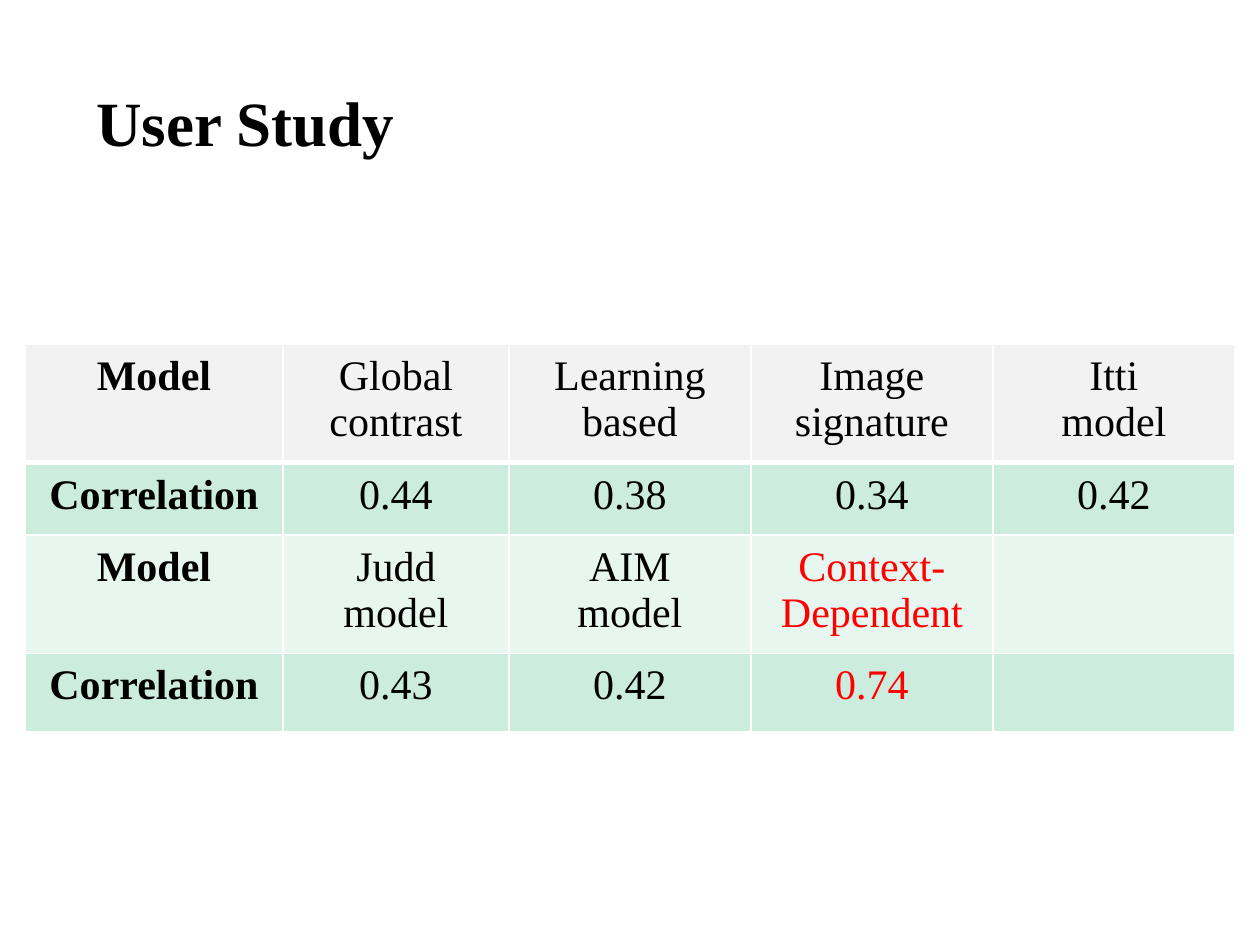
"""Build the User Study slide with its table of model correlations."""
from dataclasses import dataclass

from lxml.etree import SubElement
from pptx import Presentation
from pptx.dml.color import RGBColor as Color
from pptx.enum.text import MSO_ANCHOR as Anchor, PP_ALIGN as Align
from pptx.oxml.ns import qn
from pptx.util import Pt

TITLE = "User Study"
ROWS = [
    ["Model", "Global contrast", "Learning based", "Image signature", "Itti\nmodel"],
    ["Correlation", "0.44", "0.38", "0.34", "0.42"],
    ["Model", "Judd model", "AIM\nmodel", "Context-Dependent", ""],
    ["Correlation", "0.43", "0.42", "0.74", ""],
]
HIGHLIGHTS = {(2, 3), (3, 3)}

PX = 914400 // 126
PAGE_SIZE = (1260, 945)
TITLE_BOX = (84, 42, 914, 158)
TABLE_ORIGIN = (25, 344)
COLUMN_WIDTHS = [258, 226, 242, 242, 242]
ROW_HEIGHTS = [113, 72, 117, 78]
CELL_MARGINS = (18, 9)


@dataclass(frozen=True)
class Theme:
    font: str = "Times New Roman"
    title_size: int = 36
    cell_size: int = 24
    text: str = "000000"
    highlight: str = "FF0000"
    border: str = "FFFFFF"
    fills: tuple = ("F2F2F2", "CCECDE", "E7F6EF", "CCECDE")
    thin: int = 1
    thick: int = 3


THEME = Theme()


def style_text(frame, size, color, bold):
    for para in frame.paragraphs:
        for span in para.runs:
            font = span.font
            font.name, font.size, font.bold = THEME.font, Pt(size), bold
            font.color.rgb = Color.from_string(color)


def set_borders(cell, top, bottom):
    properties = cell._tc.get_or_add_tcPr()
    widths = {"a:lnL": THEME.thin, "a:lnR": THEME.thin, "a:lnT": top, "a:lnB": bottom}
    for position, (tag, width) in enumerate(widths.items()):
        line = SubElement(properties, qn(tag), w=str(Pt(width)))
        fill = SubElement(line, qn("a:solidFill"))
        SubElement(fill, qn("a:srgbClr"), val=THEME.border)
        properties.insert(position, line)


def add_title(page):
    box = page.shapes.add_textbox(*(value * PX for value in TITLE_BOX))
    frame = box.text_frame
    frame.word_wrap = True
    frame.vertical_anchor = Anchor.MIDDLE
    frame.text = TITLE
    style_text(frame, THEME.title_size, THEME.text, True)


def fill_cell(cell, text, row, column):
    side, edge = (value * PX for value in CELL_MARGINS)
    cell.margin_left = cell.margin_right = side
    cell.margin_top = cell.margin_bottom = edge
    cell.fill.solid()
    cell.fill.fore_color.rgb = Color.from_string(THEME.fills[row])
    set_borders(
        cell,
        THEME.thick if row == 1 else THEME.thin,
        THEME.thick if row == 0 else THEME.thin,
    )
    cell.text_frame.text = text
    for para in cell.text_frame.paragraphs:
        para.alignment = Align.CENTER
    color = THEME.highlight if (row, column) in HIGHLIGHTS else THEME.text
    style_text(cell.text_frame, THEME.cell_size, color, column == 0)


def add_results(page):
    bounds = (*TABLE_ORIGIN, sum(COLUMN_WIDTHS), sum(ROW_HEIGHTS))
    table = page.shapes.add_table(
        len(ROWS), len(COLUMN_WIDTHS), *(value * PX for value in bounds)
    ).table
    for column, width in zip(table.columns, COLUMN_WIDTHS):
        column.width = width * PX
    for row, height in zip(table.rows, ROW_HEIGHTS):
        row.height = height * PX
    for row, texts in enumerate(ROWS):
        for column, text in enumerate(texts):
            fill_cell(table.cell(row, column), text, row, column)


def main():
    deck = Presentation()
    deck.slide_width, deck.slide_height = (value * PX for value in PAGE_SIZE)
    page = deck.slides.add_slide(deck.slide_layouts[6])
    add_title(page)
    add_results(page)
    deck.save("out.pptx")


if __name__ == "__main__":
    main()
